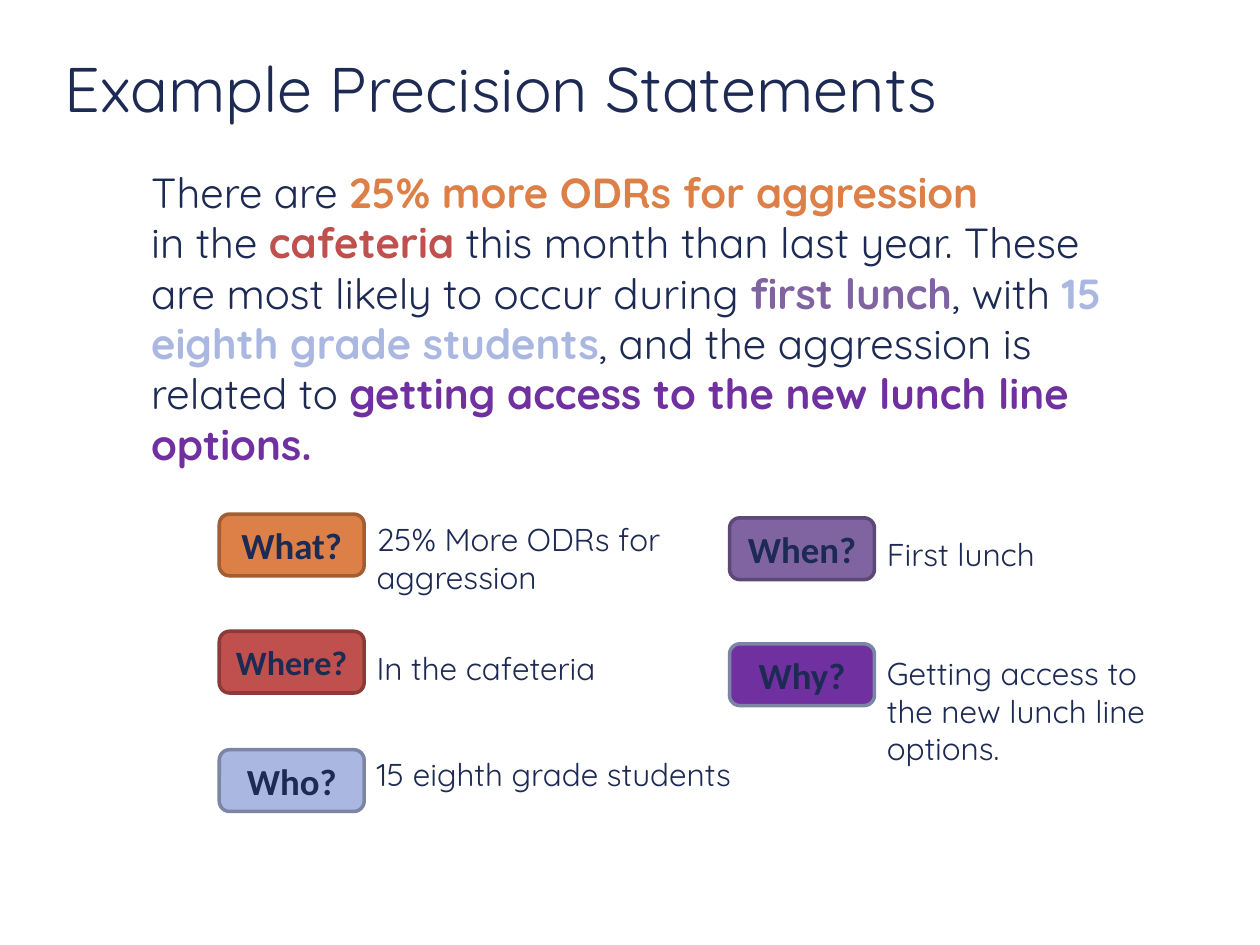
from lxml import etree
from pptx import Presentation
from pptx.dml.color import RGBColor
from pptx.enum import shapes, text
from pptx.oxml import ns
from pptx.util import Inches, Pt

NAVY = RGBColor(0x1D, 0x2A, 0x53)
ORANGE = RGBColor(0xDD, 0x80, 0x47)
DARK_ORANGE = RGBColor(0xA1, 0x5D, 0x33)
RED = RGBColor(0xC0, 0x50, 0x4D)
DARK_RED = RGBColor(0x8C, 0x3A, 0x38)
PERIWINKLE = RGBColor(0xAA, 0xB7, 0xE1)
SLATE = RGBColor(0x7C, 0x85, 0xA4)
MAUVE = RGBColor(0x80, 0x64, 0xA2)
DARK_MAUVE = RGBColor(0x5D, 0x48, 0x76)
PURPLE = RGBColor(0x70, 0x30, 0xA0)

BODY_FONT = "Quicksand"
TAG_FONT = "Calibri"
TAG_WIDTH, TAG_HEIGHT = 1.15, 0.49
LEFT_COLUMN, RIGHT_COLUMN = 1.74, 5.79

# Each line of the statement is a list of (wording, highlight colour or None).
STATEMENT = [
    [("There are ", None), ("25% more ODRs for aggression ", ORANGE)],
    [
        ("in the ", None),
        ("cafeteria", RED),
        (" this month than last year. These are most likely to occur during ", None),
        ("first lunch", MAUVE),
        (", with ", None),
        ("15 eighth grade students", PERIWINKLE),
        (", and the aggression is related to ", None),
        ("getting access to the new lunch line options.", PURPLE),
    ],
]

# question, size, fill, outline, column, tag top, answer, answer top, width, height
QUESTIONS = [
    ("What?", 21, ORANGE, DARK_ORANGE, LEFT_COLUMN, 4.08,
     "25% More ODRs for aggression", 4.08, 2.76, 0.71),
    ("Where?", 19.5, RED, DARK_RED, LEFT_COLUMN, 5.01,
     "In the cafeteria", 5.1, 2.76, 0.4),
    ("Who?", 21, PERIWINKLE, SLATE, LEFT_COLUMN, 5.95,
     "15 eighth grade students", 5.94, 5.16, 0.4),
    ("When?", 21, MAUVE, DARK_MAUVE, RIGHT_COLUMN, 4.11,
     "First lunch", 4.2, 2.76, 0.4),
    ("Why?", 21, PURPLE, SLATE, RIGHT_COLUMN, 5.11,
     "Getting access to the new lunch line options.", 5.14, 2.32, 1.01),
]


def place(shape, left, top, width, height):
    shape.left, shape.top = Inches(left), Inches(top)
    shape.width, shape.height = Inches(width), Inches(height)


def set_font(font, name, size, bold=False):
    font.name, font.size, font.bold = name, Pt(size), bold
    font.color.rgb = NAVY


def fill_title(title):
    place(title, 0.41, 0.3, 8.43, 0.79)
    frame = title.text_frame
    frame.text = "Example Precision Statements"
    frame.auto_size = text.MSO_AUTO_SIZE.NONE
    frame.vertical_anchor = text.MSO_ANCHOR.MIDDLE
    paragraph = frame.paragraphs[0]
    paragraph.alignment = text.PP_ALIGN.LEFT
    set_font(paragraph.font, BODY_FONT, 36)


def fill_statement(body):
    place(body, 1.1, 1.27, 7.91, 4.48)
    body.text_frame.auto_size = text.MSO_AUTO_SIZE.NONE
    paragraph = body.text_frame.paragraphs[0]
    paragraph.space_before = Pt(0)
    properties = paragraph._p.get_or_add_pPr()
    properties.set("marL", "0")
    properties.set("indent", "0")
    etree.SubElement(properties, ns.qn("a:buNone"))
    set_font(paragraph.font, BODY_FONT, 24)
    for number, line in enumerate(STATEMENT):
        if number:
            paragraph.add_line_break()
        for wording, highlight in line:
            run = paragraph.add_run()
            run.text = wording
            set_font(run.font, BODY_FONT, 24, bold=highlight is not None)
            run.font.color.rgb = highlight or NAVY


def add_tag(slide, question, size, fill, outline, left, top):
    tag = slide.shapes.add_shape(
        shapes.MSO_SHAPE.ROUNDED_RECTANGLE,
        Inches(left), Inches(top), Inches(TAG_WIDTH), Inches(TAG_HEIGHT))
    tag.shadow.inherit = False
    tag.fill.solid()
    tag.fill.fore_color.rgb = fill
    tag.line.color.rgb = outline
    tag.line.width = Pt(2)
    frame = tag.text_frame
    frame.text = question
    frame.vertical_anchor = text.MSO_ANCHOR.MIDDLE
    paragraph = frame.paragraphs[0]
    paragraph.alignment = text.PP_ALIGN.CENTER
    set_font(paragraph.font, TAG_FONT, size, bold=True)


def add_answer(slide, answer, left, top, width, height):
    box = slide.shapes.add_textbox(
        Inches(left), Inches(top), Inches(width), Inches(height))
    frame = box.text_frame
    frame.word_wrap = True
    frame.text = answer
    set_font(frame.paragraphs[0].font, BODY_FONT, 18)


def main():
    deck = Presentation()
    deck.slide_width, deck.slide_height = Inches(10), Inches(7.5)
    slide = deck.slides.add_slide(deck.slide_layouts[1])
    fill_title(slide.shapes.title)
    fill_statement(slide.placeholders[1])
    for (question, size, fill, outline, column, tag_top,
         answer, answer_top, width, height) in QUESTIONS:
        add_tag(slide, question, size, fill, outline, column, tag_top)
        add_answer(slide, answer, column + TAG_WIDTH, answer_top, width, height)
    deck.save("out.pptx")


if __name__ == "__main__":
    main()
